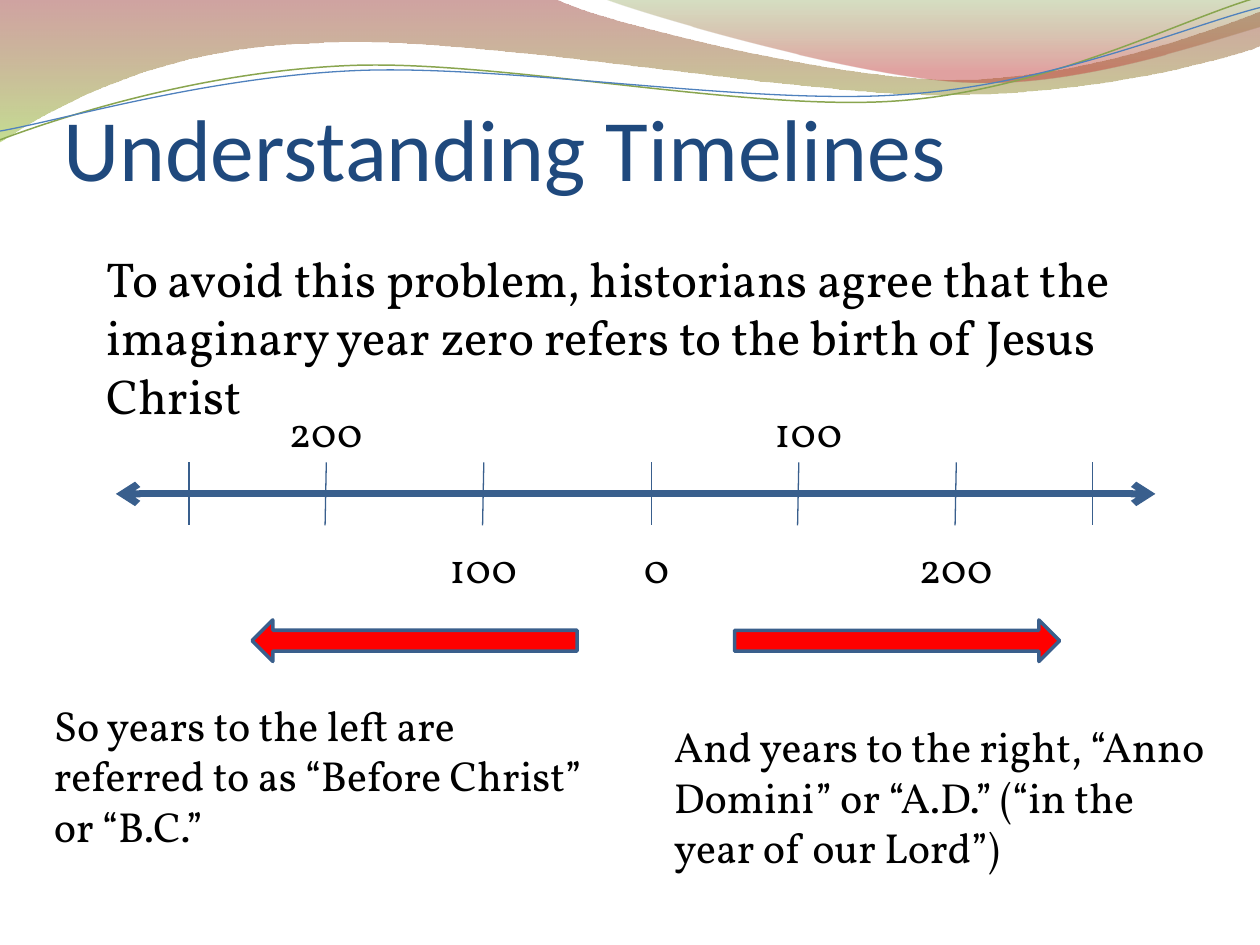
from math import cos, radians, sin

from lxml.etree import SubElement
from pptx import Presentation
from pptx.dml.color import RGBColor
from pptx.enum.shapes import MSO_CONNECTOR as Connector, MSO_SHAPE as Preset
from pptx.enum.text import MSO_ANCHOR as Anchor, MSO_AUTO_SIZE as AutoSize, PP_ALIGN as Align
from pptx.oxml.ns import qn
from pptx.util import Pt

PX = 9144

NAVY = RGBColor(0x1F, 0x49, 0x7D)
BLACK = RGBColor(0x00, 0x00, 0x00)
RED = RGBColor(0xFF, 0x00, 0x00)
AXIS_BLUE = RGBColor(0x39, 0x5F, 0x8D)
EDGE_BLUE = RGBColor(0x3A, 0x5F, 0x8C)
WAVE_GREEN = RGBColor(0x89, 0xA5, 0x4F)
WAVE_BLUE = RGBColor(0x4F, 0x81, 0xBD)
BRICK = RGBColor(0x97, 0x33, 0x30)
LIME = RGBColor(0x95, 0xC2, 0x38)
OLIVE = RGBColor(0x76, 0x95, 0x37)
CRIMSON = RGBColor(0xBE, 0x33, 0x30)

BANNERS = [
    ([(0, 0), (440, -1), (476, 17, 664, 63, 758, 63), (853, 63, 958, 26, 1000, 9),
      (1001, 36), (983, 44, 870, 76, 746, 75), (622, 75, 382, 28, 257, 34),
      (129, 36, 46, 83, -1, 113), (0, 0)],
     [(0, BRICK, 45), (1, LIME, 55)]),
    ([(479, -1), (509, 11, 682, 62, 769, 65), (856, 69, 961, 32, 1000, 21),
      (1000, 0), (479, -1)],
     [(0, OLIVE, 30), (0.8, CRIMSON, 45)]),
]
WAVE_TILT = -2.7
WAVES = [
    ([(0, 111), (48, 93, 158, 57, 277, 52), (395, 47, 593, 89, 713, 80),
      (833, 71, 938, 15, 998, -2)], (499, 57.5), WAVE_GREEN, 0.85),
    ([(0, 104), (47, 96, 164, 61, 283, 56), (403, 51, 597, 84, 717, 75),
      (836, 67, 941, 21, 1000, 6)], (499.5, 59), WAVE_BLUE, 0.75),
]

TICK_TOP, TICK_BOTTOM = 367, 417
TICKS = [(517, 517), (634, 633), (759, 758), (867, 867),
         (384, 383), (259, 258), (150, 150)]
ABOVE, BELOW = 317, 425
YEARS = [("0", 492, BELOW, 58), ("100", 600, ABOVE, 83), ("100", 342, BELOW, 83),
         ("200", 717, BELOW, 83), ("200", 217, ABOVE, 83)]
ERA_ARROWS = [(200, 0), (583, 180)]
PASSAGES = [
    ("To avoid this problem, historians agree that the imaginary year zero "
     "refers to the birth of Jesus Christ", (75, 192, 842, 151), 28),
    ("So years to the left are referred to as “Before Christ” or “B.C.”",
     (33, 550, 450, 131), 24),
    ("And years to the right, “Anno Domini” or “A.D.” (“in the year of our Lord”)",
     (525, 567, 450, 131), 24),
]


def px(*lengths):
    return [round(length * PX) for length in lengths]


def apply_format(target, values):
    for name, value in values.items():
        setattr(target, name, value)


def write_text(frame, text, font_name, size, color, align):
    frame.text = text
    paragraph = frame.paragraphs[0]
    paragraph.alignment = align
    font = paragraph.runs[0].font
    apply_format(font, {"name": font_name, "size": Pt(size)})
    font.color.rgb = color


def add_passage(slide, text, box, size, align=Align.LEFT):
    frame = slide.shapes.add_textbox(*px(*box)).text_frame
    apply_format(frame, {"word_wrap": True, "auto_size": AutoSize.SHAPE_TO_FIT_TEXT})
    write_text(frame, text, "Vollkorn", size, BLACK, align)


def turn(segment, center, degrees):
    angle = radians(degrees)
    turned = []
    for x, y in zip(segment[::2], segment[1::2]):
        dx, dy = x - center[0], y - center[1]
        turned += [center[0] + dx * cos(angle) - dy * sin(angle),
                   center[1] + dx * sin(angle) + dy * cos(angle)]
    return turned


def add_outline(slide, segments, closed):
    points = [px(*segment[i:i + 2]) for segment in segments
              for i in range(0, len(segment), 2)]
    builder = slide.shapes.build_freeform(*points[0])
    builder.add_line_segments(points[1:], close=closed)
    shape = builder.convert_to_shape()
    shape.shadow.inherit = False
    steps = iter(list(shape.element.spPr.iter(qn("a:lnTo"))))
    for segment in segments[1:]:
        step = next(steps)
        if len(segment) == 6:
            step.tag = qn("a:cubicBezTo")
            for extra in (next(steps), next(steps)):
                step.append(extra[0])
                extra.getparent().remove(extra)
    return shape


def add_banner(slide, segments, stops):
    banner = add_outline(slide, segments, True)
    banner.line.fill.background()
    banner.fill.gradient()
    banner.fill.gradient_angle = 270
    for stop, (position, color, _) in zip(banner.fill.gradient_stops, stops):
        stop.position = position
        stop.color.rgb = color
    tints = banner.element.spPr.iter(qn("a:srgbClr"))
    for tint, (_, _, opacity) in zip(tints, stops):
        SubElement(tint, qn("a:alpha"), val=str(opacity * 1000))


def add_wave(slide, segments, center, color, width):
    level = [turn(segment, center, -WAVE_TILT) for segment in segments]
    wave = add_outline(slide, level, False)
    wave.rotation = WAVE_TILT
    wave.fill.background()
    wave.line.color.rgb = color
    wave.line.width = Pt(width)


def add_line(slide, ends, width, arrowheads=False):
    line = slide.shapes.add_connector(Connector.STRAIGHT, *px(*ends))
    line.line.color.rgb = AXIS_BLUE
    line.line.width = Pt(width)
    properties = line.element.spPr
    if arrowheads:
        for end in ("a:headEnd", "a:tailEnd"):
            SubElement(properties.find(qn("a:ln")), qn(end), type="arrow")
    SubElement(properties, qn("a:effectLst"))


def add_era_arrow(slide, left, rotation):
    arrow = slide.shapes.add_shape(Preset.LEFT_ARROW, *px(left, 492, 258, 33))
    arrow.rotation = rotation
    arrow.shadow.inherit = False
    arrow.fill.solid()
    arrow.fill.fore_color.rgb = RED
    arrow.line.color.rgb = EDGE_BLUE
    arrow.line.width = Pt(2)


def place_title(slide, text):
    title = slide.shapes.title
    left, top, width, height = px(50, 33, 900, 125)
    apply_format(title, {"left": left, "top": top, "width": width, "height": height})
    apply_format(title.text_frame, {
        "vertical_anchor": Anchor.BOTTOM, "word_wrap": True, "auto_size": AutoSize.NONE,
        "margin_left": 0, "margin_top": 5 * PX, "margin_right": 0, "margin_bottom": 0})
    write_text(title.text_frame, text, "Calibri", 50, NAVY, Align.LEFT)
    title.element.getparent().append(title.element)


def main():
    deck = Presentation()
    deck.slide_width, deck.slide_height = px(1000, 750)
    slide = deck.slides.add_slide(deck.slide_layouts[5])
    for banner in BANNERS:
        add_banner(slide, *banner)
    for wave in WAVES:
        add_wave(slide, *wave)
    place_title(slide, "Understanding Timelines")
    add_line(slide, (92, 392, 917, 392), 4, arrowheads=True)
    for upper, lower in TICKS:
        add_line(slide, (upper, TICK_TOP, lower, TICK_BOTTOM), 0.75)
    for year, left, top, width in YEARS:
        add_passage(slide, year, (left, top, width, 50), 24, Align.CENTER)
    for arrow in ERA_ARROWS:
        add_era_arrow(slide, *arrow)
    for passage in PASSAGES:
        add_passage(slide, *passage)
    deck.save("out.pptx")


if __name__ == "__main__":
    main()
